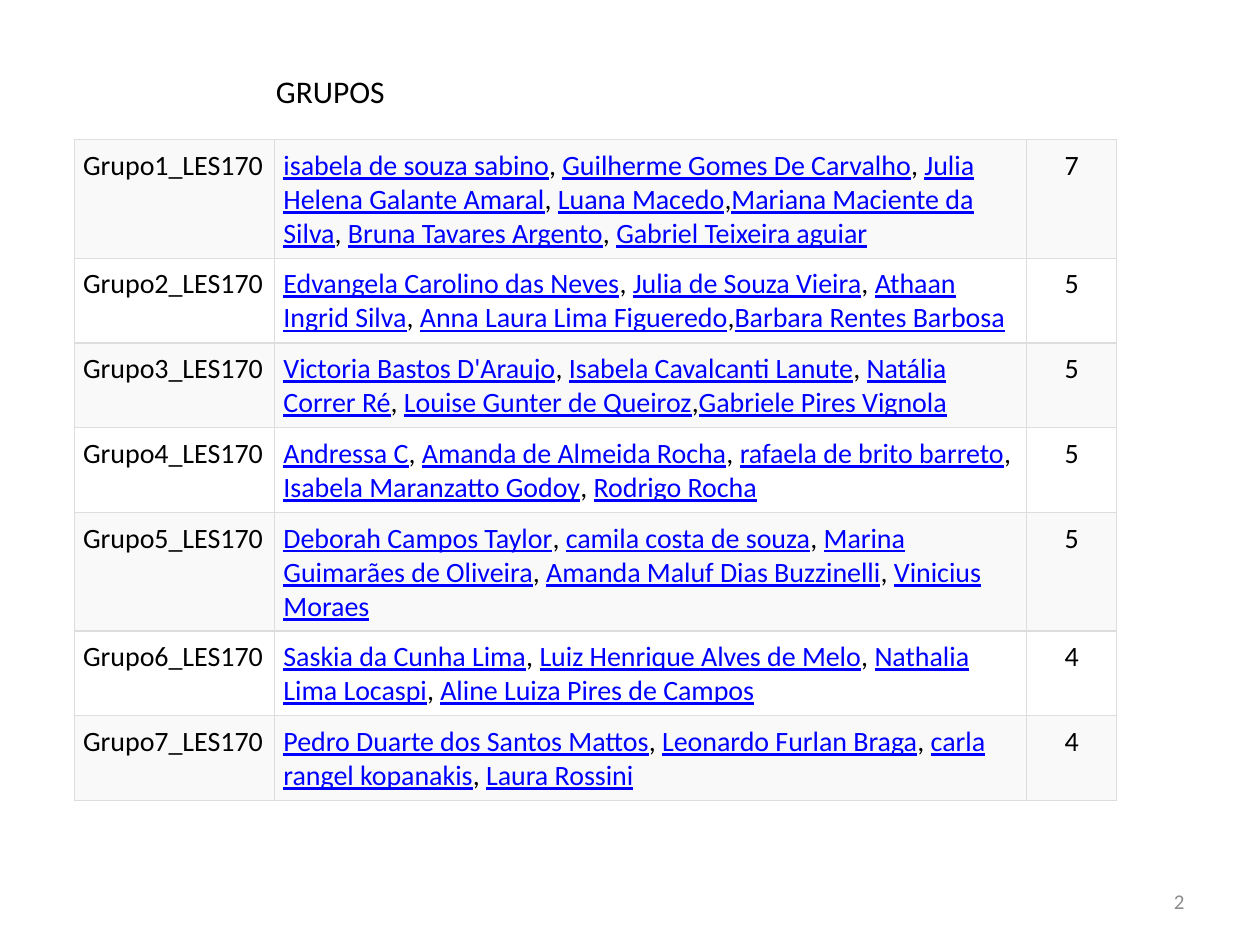
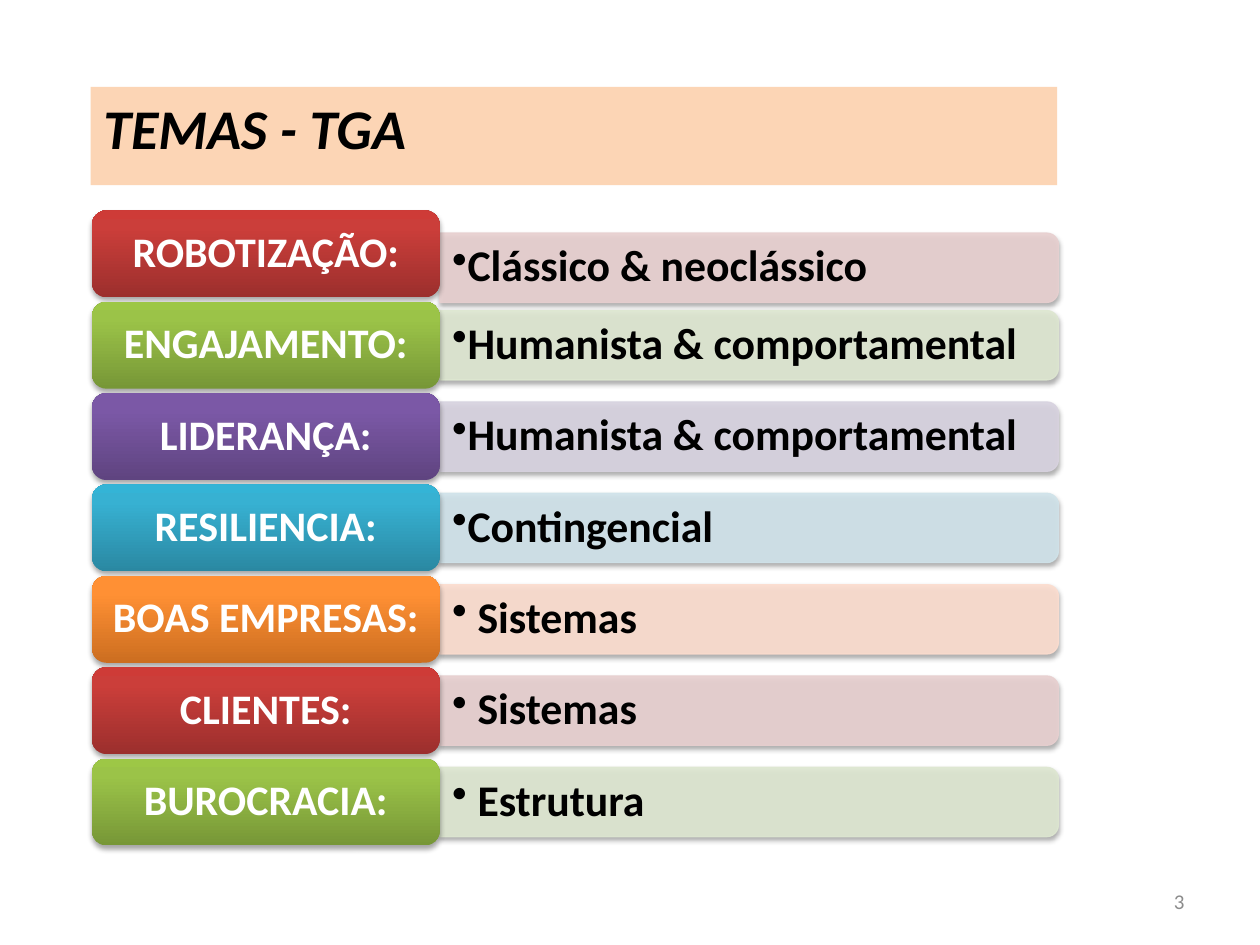
"""Build the groups table slide and the themes list slide."""
import pptx
import pptx.dml.color
import pptx.enum.shapes
import pptx.enum.text
import pptx.oxml
import pptx.oxml.ns
import pptx.util

Inches, Pt = pptx.util.Inches, pptx.util.Pt
ALIGN = pptx.enum.text.PP_ALIGN
ANCHOR = pptx.enum.text.MSO_ANCHOR
SHAPE = pptx.enum.shapes.MSO_SHAPE

GROUPS = [
    ("Grupo1_LES170", "isabela de souza sabino, Guilherme Gomes De Carvalho, Julia Helena Galante Amaral, "
     "Luana Macedo,Mariana Maciente da Silva, Bruna Tavares Argento, Gabriel Teixeira aguiar", 3),
    ("Grupo2_LES170", "Edvangela Carolino das Neves, Julia de Souza Vieira, Athaan Ingrid Silva, "
     "Anna Laura Lima Figueredo,Barbara Rentes Barbosa", 2),
    ("Grupo3_LES170", "Victoria Bastos D'Araujo, Isabela Cavalcanti Lanute, Natália Correr Ré, "
     "Louise Gunter de Queiroz,Gabriele Pires Vignola", 2),
    ("Grupo4_LES170", "Andressa C, Amanda de Almeida Rocha, rafaela de brito barreto, "
     "Isabela Maranzatto Godoy, Rodrigo Rocha", 2),
    ("Grupo5_LES170", "Deborah Campos Taylor, camila costa de souza, Marina Guimarães de Oliveira, "
     "Amanda Maluf Dias Buzzinelli, Vinicius Moraes", 3),
    ("Grupo6_LES170", "Saskia da Cunha Lima, Luiz Henrique Alves de Melo, Nathalia Lima Locaspi, "
     "Aline Luiza Pires de Campos", 2),
    ("Grupo7_LES170", "Pedro Duarte dos Santos Mattos, Leonardo Furlan Braga, carla rangel kopanakis, "
     "Laura Rossini", 2),
]
THEMES = [
    ("ROBOTIZAÇÃO:", "Clássico & neoclássico"),
    ("ENGAJAMENTO:", "Humanista & comportamental"),
    ("LIDERANÇA:", "Humanista & comportamental"),
    ("RESILIENCIA:", "Contingencial"),
    ("BOAS EMPRESAS:", " Sistemas"),
    ("CLIENTES:", " Sistemas"),
    ("BUROCRACIA:", " Estrutura"),
]
HUES = [
    ("9C2F2D", "CB3E3A", "CE3B37", "E8D0D0"),
    ("779737", "9BC348", "9DC746", "DEE7D1"),
    ("5F4480", "7B58A6", "7C57A8", "D8D3E0"),
    ("2A88A2", "37B1D2", "34B4D6", "D0E3EA"),
    ("CC6E20", "FF9034", "FF9136", "FCDDCF"),
]
COLORS = {"ink": "000000", "link": "0000FF", "page": "8C8C8C", "white": "FFFFFF",
          "stripe": "F9F9F9", "rule": "DDDDDD", "peach": "FCD5B5"}
FONTS = {
    "head": {"size": Pt(18), "bold": False},
    "band": {"size": Pt(32), "bold": True, "italic": True},
    "cell": {"size": Pt(16)},
    "link": {"size": Pt(16), "underline": True},
    "page": {"size": Pt(12)},
    "tab": {"size": Pt(24), "bold": True},
    "bar": {"size": Pt(25), "bold": True},
}
COLS = (1.59, 5.97, 0.71)
ROWS = {2: 0.67, 3: 0.94}
LEFT, TOP, PITCH = 0.73, 1.67, 0.725
TAB_W, TAB_H, BAR_W, BAR_H = 2.76, 0.69, 4.91, 0.55
NUDGE = 0.11


def rgb(name):
    return pptx.dml.color.RGBColor.from_string(COLORS[name])


def put(item, **values):
    for key, value in values.items():
        setattr(item, key, value)


def place(left, top, width, height):
    return [Inches(value) for value in (left, top, width, height)]


def add_run(line, text, style, color="ink"):
    run = line.add_run()
    run.text = text
    put(run.font, name="Calibri", **FONTS[style])
    run.font.color.rgb = rgb(color)


def add_xml(parent, text):
    head, tail = text.split(" ", 1)
    parent.append(pptx.oxml.parse_xml(f"{head} {pptx.oxml.ns.nsdecls('a')} {tail}"))


def solid(color, alpha=100):
    return (f'<a:solidFill><a:srgbClr val="{color}"><a:alpha val="{alpha * 1000}"/>'
            '</a:srgbClr></a:solidFill>')


def add_slide(deck, title, box, style, page):
    slide = deck.slides.add_slide(deck.slide_layouts[5])
    head = slide.shapes.title
    put(head, **dict(zip(("left", "top", "width", "height"), place(*box))))
    put(head.text_frame, vertical_anchor=ANCHOR.TOP, auto_size=pptx.enum.text.MSO_AUTO_SIZE.NONE,
        word_wrap=style == "band")
    line = head.text_frame.paragraphs[0]
    line.alignment = ALIGN.LEFT
    add_run(line, title, style)
    frame = slide.shapes.add_textbox(*place(7.17, 6.95, 2.33, 0.4)).text_frame
    put(frame, word_wrap=True, vertical_anchor=ANCHOR.MIDDLE)
    line = frame.paragraphs[0]
    line.alignment = ALIGN.RIGHT
    add_run(line, str(page), "page", "page")
    return slide


def add_names(line, names):
    for index, name in enumerate(names):
        if index:
            add_run(line, ", " if name.startswith(" ") else ",", "cell")
        add_run(line, name.strip(), "link", "link")


def style_cell(cell, row):
    put(cell, **dict.fromkeys(("margin_left", "margin_right", "margin_top", "margin_bottom"), Inches(0.07)))
    props = cell._tc.get_or_add_tcPr()
    for side in "LRTB":
        add_xml(props, f'<a:ln{side} w="{Pt(0.75)}">{solid(COLORS["rule"])}</a:ln{side}>')
    cell.fill.solid()
    cell.fill.fore_color.rgb = rgb("white" if row % 2 else "stripe")


def add_groups(slide):
    heights = [ROWS[lines] for _, _, lines in GROUPS]
    table = slide.shapes.add_table(len(GROUPS), len(COLS),
                                   *place(0.59, 1.11, sum(COLS), sum(heights))).table
    put(table, first_row=False, horz_banding=False)
    for column, width in zip(table.columns, COLS):
        column.width = Inches(width)
    for index, (group, people, _) in enumerate(GROUPS):
        table.rows[index].height = Inches(heights[index])
        names = people.split(",")
        cells = table.rows[index].cells
        for cell in cells:
            style_cell(cell, index)
        label, crew, count = [cell.text_frame.paragraphs[0] for cell in cells]
        add_run(label, group, "cell")
        add_names(crew, names)
        add_run(count, str(len(names)), "cell")
        count.alignment = ALIGN.CENTER


def add_shade(shape):
    add_xml(shape._element.spPr,
            f'<a:effectLst ><a:outerShdw blurRad="{Pt(3.1)}" dist="{Pt(1.8)}" dir="5400000" '
            'rotWithShape="0"><a:srgbClr val="000000"><a:alpha val="35000"/></a:srgbClr>'
            '</a:outerShdw></a:effectLst>')


def add_bar(slide, text, middle, color):
    left = LEFT + TAB_W
    bar = slide.shapes.add_shape(
        SHAPE.ROUND_2_SAME_RECTANGLE,
        *place(left + (BAR_W - BAR_H) / 2, middle - BAR_W / 2, BAR_H, BAR_W))
    bar.rotation = 90
    paint = solid(color, 90)
    add_xml(bar._element.spPr, paint.replace("<a:solidFill>", "<a:solidFill >"))
    add_xml(bar._element.spPr, f'<a:ln w="{Pt(0.75)}">{paint}</a:ln>')
    add_shade(bar)
    frame = slide.shapes.add_textbox(*place(left, middle - 0.25, 4.88, 0.5)).text_frame
    put(frame, word_wrap=True, vertical_anchor=ANCHOR.MIDDLE)
    line = frame.paragraphs[0]
    line.line_spacing = 0.9
    props = line._p.get_or_add_pPr()
    put(props, marL=Inches(0.25), indent=-Inches(0.25))
    add_xml(props, '<a:buChar char="•"/>')
    add_run(line, text, "bar")


def add_tab(slide, text, top, hues):
    tab = slide.shapes.add_shape(SHAPE.ROUNDED_RECTANGLE, *place(LEFT, top, TAB_W, TAB_H))
    stops = "".join(f'<a:gs pos="{spot * 1000}"><a:srgbClr val="{hue}"/></a:gs>'
                    for spot, hue in zip((0, 80, 100), hues))
    add_xml(tab._element.spPr, f'<a:gradFill rotWithShape="1"><a:gsLst>{stops}</a:gsLst>'
            '<a:lin ang="16200000" scaled="0"/></a:gradFill>')
    add_xml(tab._element.spPr, '<a:ln ><a:noFill/></a:ln>')
    add_shade(tab)
    put(tab.text_frame, word_wrap=True, vertical_anchor=ANCHOR.MIDDLE)
    line = tab.text_frame.paragraphs[0]
    put(line, alignment=ALIGN.CENTER, line_spacing=0.9)
    add_run(line, text, "tab", "white")


def add_themes(slide):
    band = slide.shapes.title
    band.fill.solid()
    band.fill.fore_color.rgb = rgb("peach")
    band.text_frame.paragraphs[0]._p.get_or_add_pPr().marL = Inches(0.12)
    for index, (theme, school) in enumerate(THEMES):
        top = TOP + index * PITCH
        *hues, tint = HUES[index % len(HUES)]
        add_bar(slide, school, top + TAB_H / 2 + (0 if index else NUDGE), tint)
        add_tab(slide, theme, top, hues)


def main():
    deck = pptx.Presentation()
    put(deck, slide_width=Inches(10), slide_height=Inches(7.5))
    add_groups(add_slide(deck, "GRUPOS", (2.09, 0.52, 1.07, 0.4), "head", 2))
    add_themes(add_slide(deck, "TEMAS - TGA", (0.72, 0.69, 7.67, 0.78), "band", 3))
    deck.save("out.pptx")


if __name__ == "__main__":
    main()
